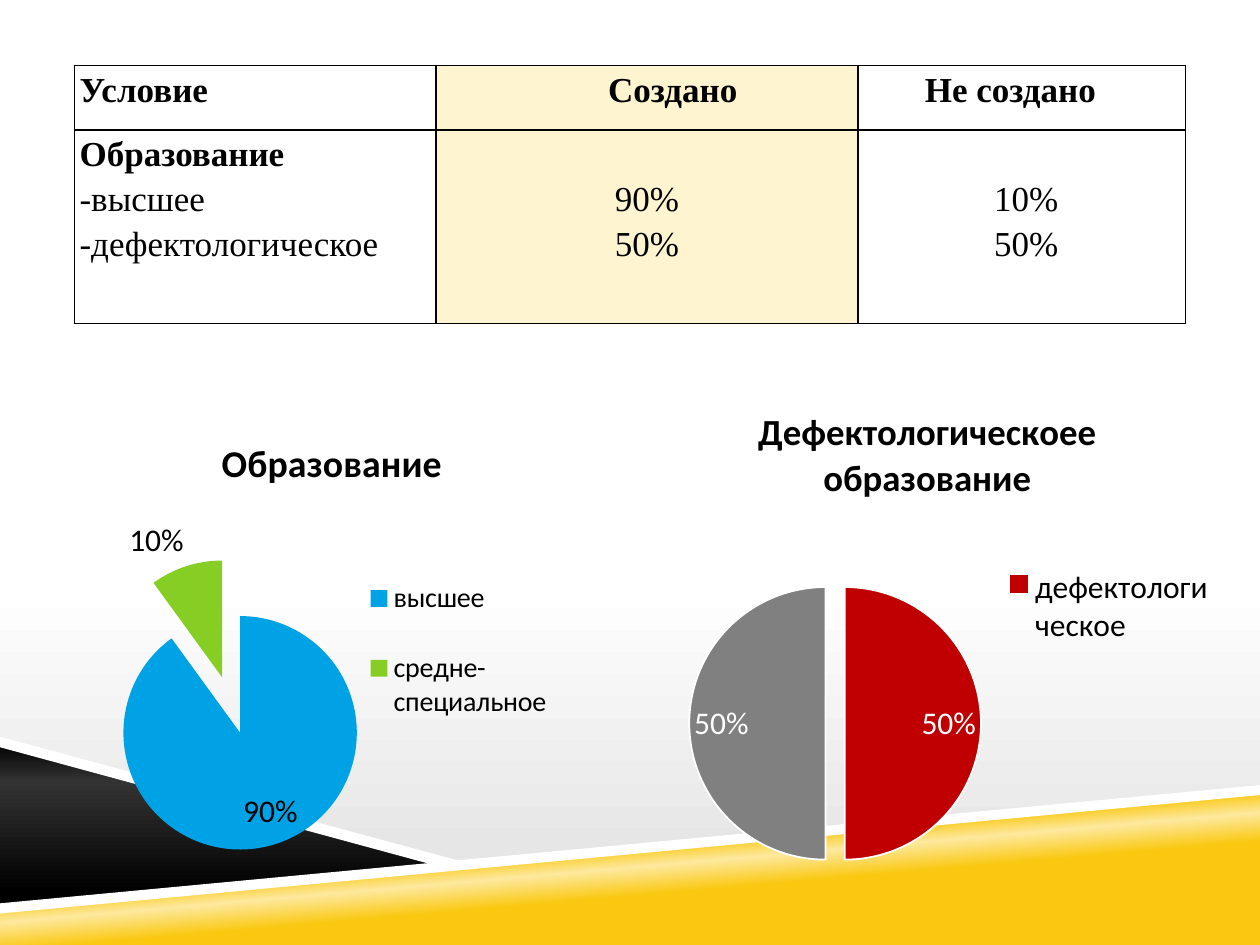
import pptx
import pptx.chart.data
import pptx.dml.color
import pptx.enum.chart
import pptx.enum.text
import pptx.oxml
import pptx.oxml.ns
import pptx.util

Pt = pptx.util.Pt
RGB = pptx.dml.color.RGBColor
ALIGN = pptx.enum.text.PP_ALIGN

BLACK = RGB(0x00, 0x00, 0x00)
WHITE = RGB(0xFF, 0xFF, 0xFF)
PALE = RGB(0xE6, 0xE6, 0xE6)
COAL = RGB(0x33, 0x33, 0x33)
GOLD = RGB(0xFA, 0xC8, 0x10)
CREAM = RGB(0xFD, 0xE9, 0x9F)
SAND = RGB(0xFE, 0xF4, 0xCF)
BLUE = RGB(0x00, 0xA2, 0xE6)
GREEN = RGB(0x86, 0xCE, 0x24)
RED = RGB(0xC0, 0x00, 0x00)
GREY = RGB(0x80, 0x80, 0x80)


def make(tag, inner="", attrs=""):
    """Return a new XML element with the a: and c: prefixes declared."""
    spaces = pptx.oxml.ns.nsdecls("a", "c")
    return pptx.oxml.parse_xml(f"<{tag} {spaces} {attrs}>{inner}</{tag}>")


def blend(fill, owner, stops, angle):
    """Give a fill a linear gradient of (percent, colour) stops."""
    fill.gradient()
    grad = owner.xpath(".//a:gradFill")[0]
    for child in list(grad):
        grad.remove(child)
    marks = "".join(
        f'<a:gs pos="{place * 1000}"><a:srgbClr val="{color}"/></a:gs>'
        for place, color in stops)
    grad.append(make("a:gsLst", marks))
    grad.append(make("a:lin", attrs=f'ang="{angle * 60000}" scaled="0"'))


def write(para, text, size=20, bold=False, align=ALIGN.LEFT, indent=0,
          font="Times New Roman", color=BLACK, space=None):
    para.alignment = align
    if space:
        para.line_spacing = space
    if indent:
        para._p.get_or_add_pPr().set("marL", str(Pt(indent)))
    run = para.add_run()
    run.text = text
    run.font.name, run.font.size = font, Pt(size)
    run.font.bold = bold
    run.font.color.rgb = color


def outline(slide, box, points):
    """Draw a closed shape from points relative to the box."""
    left, top = box[:2]
    spots = [(Pt(left + x), Pt(top + y)) for x, y in points]
    path = slide.shapes.build_freeform(*spots[0])
    path.add_line_segments(spots[1:], close=True)
    shape = path.convert_to_shape()
    shape.shadow.inherit = False
    shape.line.fill.background()
    return shape


def draw_base(slide, box):
    """Draw the gold and black wedges with their white edges."""
    wide, high = box[2:]
    gold = outline(slide, box, [(0, 98), (wide, 30.4), (wide, high), (0, high)])
    blend(gold.fill, gold.element, [(39, GOLD), (50, CREAM), (58, GOLD)], 265)
    dark = outline(slide, box, [(0, 3), (258.5, 72), (0, 98)])
    blend(dark.fill, dark.element, [(0, BLACK), (24, COAL), (90, BLACK)], 90)
    for edge in ([(wide, 27.6), (0, 95.2), (0, 101), (wide, 33.3)],
                 [(0, 0), (0, 6), (252, 74.4), (270, 72.9)]):
        strip = outline(slide, box, edge)
        strip.fill.solid()
        strip.fill.fore_color.rgb = WHITE


def frame(cell):
    """Put a thin black line on each side of a cell."""
    props = cell._tc.get_or_add_tcPr()
    for spot, side in enumerate("LRTB"):
        line = make(f"a:ln{side}", '<a:solidFill><a:srgbClr val="000000"/>'
                    "</a:solidFill>", f'w="{Pt(1)}"')
        props.insert(spot, line)


def draw_table(slide, box):
    heads = [("Условие", 0), ("Создано", 95.4), ("Не создано", 35.2)]
    bodies = [["Образование", "-высшее", "-дефектологическое"],
              ["90%", "50%"], ["10%", "50%"]]
    table = slide.shapes.add_table(2, 3, *map(Pt, box)).table
    table.first_row = table.horz_banding = False
    for row, high in zip(table.rows, (36.8, 110.7)):
        row.height = Pt(high)
    for col, wide in zip(table.columns, (206.6, 241.2, 187.2)):
        col.width = Pt(wide)
    for col, ((head, indent), lines) in enumerate(zip(heads, bodies)):
        top, body = table.cell(0, col), table.cell(1, col)
        for cell in (top, body):
            cell.margin_left = cell.margin_right = Pt(3)
            cell.margin_top = cell.margin_bottom = 0
            if col == 1:
                cell.fill.solid()
                cell.fill.fore_color.rgb = SAND
            else:
                cell.fill.background()
            frame(cell)
        write(top.text_frame.paragraphs[0], head, bold=True, indent=indent,
              space=1.15)
        if col:
            body.margin_top = Pt(25.6)
        for row, line in enumerate(lines):
            frm = body.text_frame
            para = frm.add_paragraph() if row else frm.paragraphs[0]
            write(para, line, bold=not (col or row), space=1.15,
                  align=ALIGN.CENTER if col else ALIGN.LEFT,
                  indent=5 if col == 2 else 0)


def layout(x, y, wide, high, inner=False):
    """Return a chart layout given in fractions of the chart."""
    parts = '<c:layoutTarget val="inner"/>' if inner else ""
    parts += '<c:xMode val="edge"/><c:yMode val="edge"/>'
    for tag, value in zip("xywh", (x, y, wide, high)):
        parts += f'<c:{tag} val="{value}"/>'
    return make("c:layout", f"<c:manualLayout>{parts}</c:manualLayout>")


def draw_pie(slide, box, title, names, values, colors, burst, plot, key,
             size, head=21.6, ink=BLACK, edge=None):
    """Draw a pie chart; a slice with an empty name gets no legend entry."""
    data = pptx.chart.data.CategoryChartData()
    data.categories = names
    data.add_series(title, values)
    kind = pptx.enum.chart.XL_CHART_TYPE.PIE
    chart = slide.shapes.add_chart(kind, *map(Pt, box), data).chart
    chart.font.name, chart.font.size = "Calibri", Pt(18)
    chart.font.color.rgb = BLACK
    chart.has_title = True
    write(chart.chart_title.text_frame.paragraphs[0], title, size=head,
          bold=True, font="Calibri", align=ALIGN.CENTER)

    pie = chart.plots[0]
    pie.vary_by_categories = True
    for spot, color in enumerate(colors):
        look = pie.series[0].points[spot].format
        look.fill.solid()
        look.fill.fore_color.rgb = color
        if edge:
            look.line.color.rgb, look.line.width = edge, Pt(1)
        else:
            look.line.fill.background()
    root = chart.element
    root.xpath(".//c:dPt")[0].addprevious(
        make("c:explosion", attrs=f'val="{burst}"'))

    pie.has_data_labels = True
    tags = pie.data_labels
    tags.show_percentage, tags.show_value = True, False
    tags.number_format, tags.number_format_is_linked = "0%", False
    tags.position = pptx.enum.chart.XL_LABEL_POSITION.BEST_FIT
    tags.font.name, tags.font.size = "Calibri", Pt(18)
    tags.font.color.rgb = ink

    chart.has_legend = True
    chart.legend.position = pptx.enum.chart.XL_LEGEND_POSITION.RIGHT
    chart.legend.include_in_layout = False
    chart.legend.font.name, chart.legend.font.size = "Calibri", Pt(size)
    chart.legend.font.color.rgb = BLACK
    for old in root.xpath(".//c:plotArea/c:layout | .//c:legend/c:layout"):
        old.getparent().remove(old)
    root.xpath(".//c:plotArea")[0].insert(0, layout(*plot, inner=True))
    over = root.xpath(".//c:legend/c:overlay")[0]
    for spot, name in enumerate(names):
        if not name:
            over.addprevious(make("c:legendEntry", f'<c:idx val="{spot}"/>'
                                  '<c:delete val="1"/>'))
    over.addprevious(layout(*key))


def main():
    deck = pptx.Presentation()
    deck.slide_width, deck.slide_height = Pt(720), Pt(540)
    slide = deck.slides.add_slide(deck.slide_layouts[6])
    blend(slide.background.fill, slide.element,
          [(0, WHITE), (62, WHITE), (90, PALE), (100, WHITE)], 90)
    draw_base(slide, (0, 421, 720, 119))
    draw_table(slide, (42.5, 37.4, 635, 147.5))
    draw_pie(slide, (25.2, 236.2, 329, 260.6), "Образование",
             ["высшее", "средне-специальное"], [90, 10], [BLUE, GREEN],
             burst=25, plot=(0.07, 0.32, 0.51, 0.64),
             key=(0.54, 0.29, 0.36, 0.46), size=16)
    draw_pie(slide, (360, 218.9, 339.8, 277.9),
             "Дефектологическоее образование", ["дефектологическое", ""],
             [50, 50], [RED, GREY], burst=7, plot=(0.09, 0.4, 0.51, 0.6),
             key=(0.63, 0.37, 0.35, 0.18), size=18, head=21, ink=WHITE,
             edge=WHITE)
    deck.save("out.pptx")


if __name__ == "__main__":
    main()
